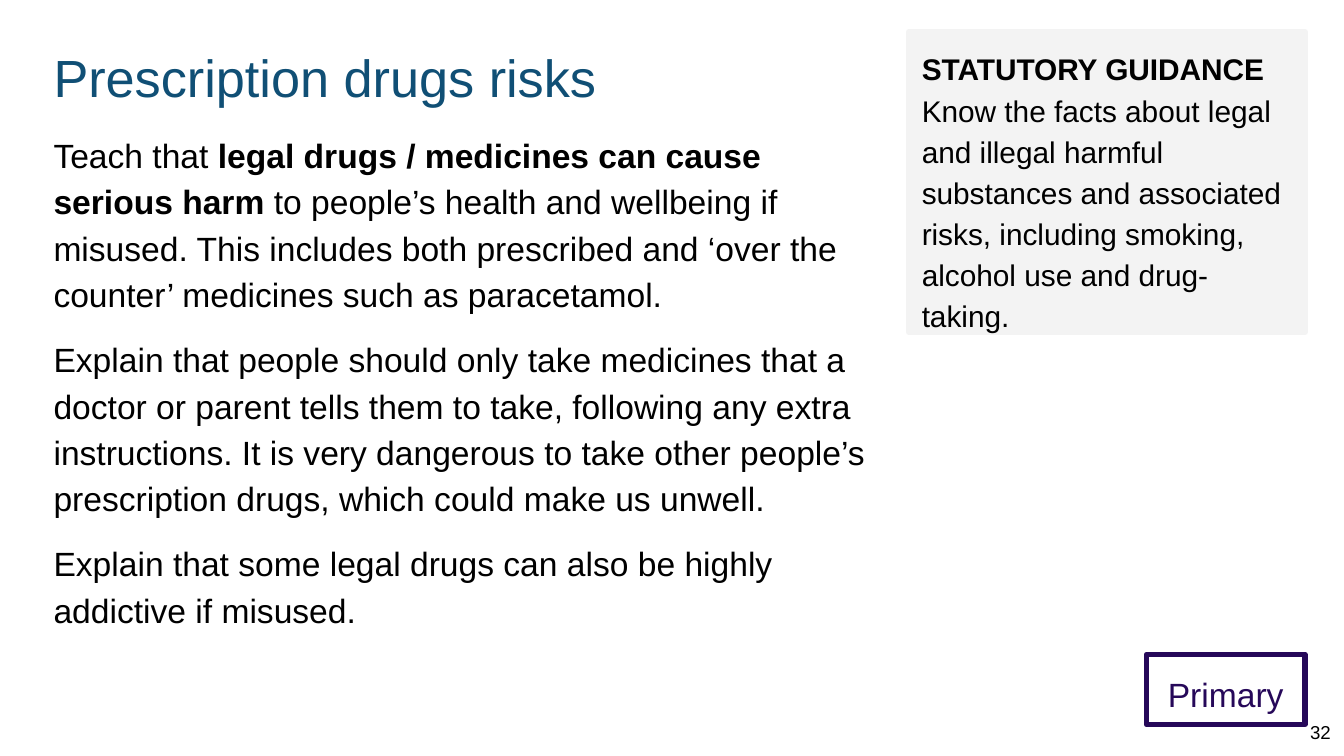
import pptx
import pptx.dml.color
import pptx.enum.shapes
import pptx.enum.text
import pptx.oxml.ns
import pptx.util
from dataclasses import dataclass
from lxml import etree
from pptx.util import Inches

ALIGN = pptx.enum.text.PP_ALIGN
ANCHOR = pptx.enum.text.MSO_ANCHOR


@dataclass(frozen=True)
class Theme:
    font: str = "Arial"
    blue: str = "104F75"
    navy: str = "260859"
    black: str = "000000"
    gray: str = "F3F3F3"
    title: int = 28
    body: int = 18
    note: int = 16
    small: int = 10
    line: int = 3


THEME = Theme()

# Each paragraph is a list of (text, bold) runs
BODY = [
    [("Teach that ", False),
     ("legal drugs / medicines can cause serious harm", True),
     (" to people’s health and wellbeing if misused. This includes both "
      "prescribed and ‘over the counter’ medicines such as paracetamol.", False)],
    [("Explain that people should only take medicines that a doctor or parent "
      "tells them to take, following any extra instructions. It is very "
      "dangerous to take other people’s prescription drugs, which could make "
      "us unwell.", False)],
    [("Explain that some legal drugs can also be highly addictive if misused.",
      False)],
]
HEAD = "STATUTORY GUIDANCE"
NOTE = ("Know the facts about legal and illegal harmful substances and "
        "associated risks, including smoking, alcohol use and drug-taking.")


def rgb(code):
    return pptx.dml.color.RGBColor.from_string(code)


def set_frame(shape, anchor=ANCHOR.TOP):
    frame = shape.text_frame
    frame.word_wrap = True
    frame.vertical_anchor = anchor
    frame.margin_left = frame.margin_right = Inches(0.1)
    frame.margin_top = frame.margin_bottom = Inches(0.1)
    return frame


def style(para, size, color, align=ALIGN.LEFT, space=1.15):
    para.alignment = align
    para.line_spacing = space
    para.font.name = THEME.font
    para.font.size = pptx.util.Pt(size)
    para.font.color.rgb = rgb(color)


def add_run(para, text, bold=False):
    run = para.add_run()
    run.text = text
    run.font.bold = bold


def add_text(slide, box, anchor=ANCHOR.TOP):
    shape = slide.shapes.add_textbox(*map(Inches, box))
    return set_frame(shape, anchor)


def add_panel(slide, box, line, fill=None):
    kind = pptx.enum.shapes.MSO_SHAPE.RECTANGLE
    shape = slide.shapes.add_shape(kind, *map(Inches, box))
    shape.shadow.inherit = False
    if fill:
        shape.fill.solid()
        shape.fill.fore_color.rgb = rgb(fill)
    else:
        shape.fill.background()
    shape.line.color.rgb = rgb(line)
    shape.line.width = pptx.util.Pt(THEME.line)
    # Round the corners of the outline
    qn = pptx.oxml.ns.qn
    edge = shape.element.spPr.find(qn("a:ln"))
    etree.SubElement(edge, qn("a:round"))
    return set_frame(shape)


def main():
    deck = pptx.Presentation()
    # Widescreen, 16 to 9
    deck.slide_width = Inches(10)
    deck.slide_height = Inches(10) * 9 // 16
    slide = deck.slides.add_slide(deck.slide_layouts[6])

    # Title
    para = add_text(slide, (0.3, 0.24, 6.41, 0.63)).paragraphs[0]
    style(para, THEME.title, THEME.blue, space=1)
    add_run(para, "Prescription drugs risks")

    # Stage label
    para = add_panel(slide, (8.53, 4.87, 1.18, 0.52), THEME.navy).paragraphs[0]
    style(para, THEME.body, THEME.navy, ALIGN.CENTER)
    add_run(para, "Primary")

    # Body text
    frame = add_text(slide, (0.3, 0.86, 6.41, 4.01))
    for i, runs in enumerate(BODY):
        para = frame.add_paragraph() if i else frame.paragraphs[0]
        style(para, THEME.body, THEME.black)
        para.space_before = pptx.util.Pt(10 if i else 0)
        for text, bold in runs:
            add_run(para, text, bold)

    # Page number
    para = add_text(slide, (9.61, 5.26, 0.39, 0.37), ANCHOR.MIDDLE).paragraphs[0]
    style(para, THEME.small, THEME.black, ALIGN.RIGHT, 1)
    add_run(para, "32")

    # Guidance panel
    frame = add_panel(slide, (6.76, 0.24, 2.95, 2.23), THEME.gray, THEME.gray)
    para = frame.paragraphs[0]
    style(para, THEME.note, THEME.black)
    add_run(para, HEAD, True)
    para.add_line_break()
    add_run(para, NOTE)

    deck.save("out.pptx")


if __name__ == "__main__":
    main()
